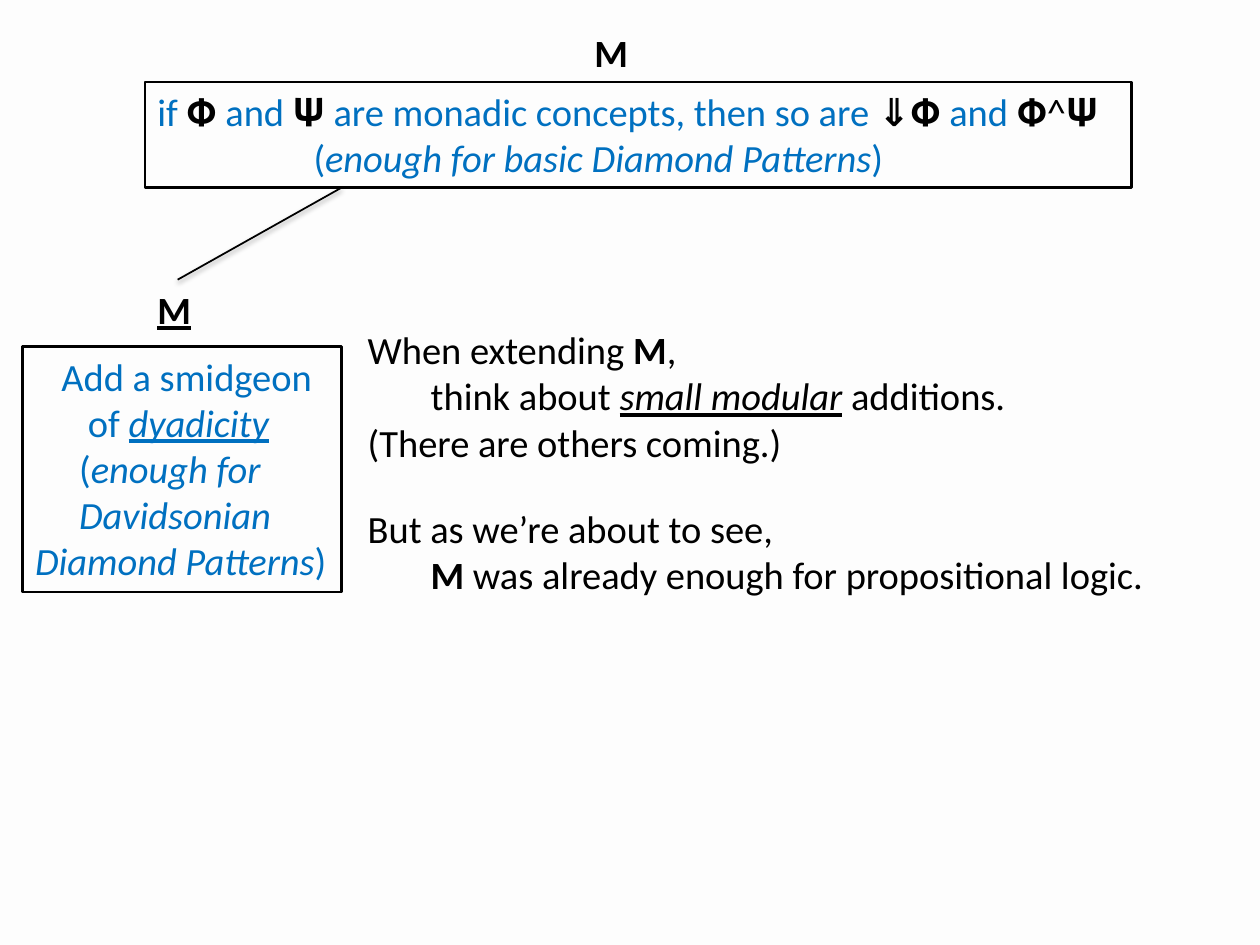
from dataclasses import dataclass

from lxml.etree import SubElement
from pptx import Presentation
from pptx.dml.color import RGBColor
from pptx.enum.shapes import MSO_CONNECTOR as Connector, MSO_SHAPE as Shape
from pptx.enum.text import MSO_ANCHOR as Anchor, MSO_AUTO_SIZE as AutoSize, PP_ALIGN as Align
from pptx.oxml.ns import qn
from pptx.slide import Slide
from pptx.util import Inches, Pt

BLACK = RGBColor(0x00, 0x00, 0x00)
BLUE = RGBColor(0x00, 0x70, 0xC0)
PAPER = RGBColor(0xFD, 0xFD, 0xFD)


@dataclass(frozen=True)
class Span:
    text: str
    color: RGBColor = BLACK
    bold: bool = False
    italic: bool = False
    underline: bool = False


@dataclass(frozen=True)
class Line:
    spans: tuple[Span, ...]
    indent: float = 0


@dataclass(frozen=True)
class Block:
    left: float
    top: float
    width: float
    height: float
    lines: tuple[Line, ...]
    framed: bool = False


def line(*spans: Span, indent: float = 0) -> Line:
    return Line(spans, indent)


def blue(text: str, italic: bool = False, underline: bool = False) -> Span:
    return Span(text, BLUE, italic=italic, underline=underline)


MODEL_LABEL = Block(4.62, 0.18, 0.76, 0.47, (line(Span("M", bold=True)),))
MODEL_BOX = Block(1.15, 0.65, 7.83, 0.84, (
    line(
        blue("if "), Span("𝚽 "), blue("and "), Span("𝚿 "),
        blue("are monadic concepts, then so are "),
        Span("⇓", bold=True), Span("𝚽 "), blue("and "), Span("𝚽^𝚿"),
    ),
    line(blue("("), blue("enough for basic Diamond Patterns", italic=True), blue(")"), indent=1.24),
), framed=True)
EXTENSION_BOX = Block(0.18, 2.75, 2.53, 1.95, (
    line(blue("Add a smidgeon"), indent=0.21),
    line(blue("of "), blue("dyadicity", italic=True, underline=True), indent=0.42),
    line(blue("("), blue("enough for", italic=True), indent=0.35),
    line(blue("Davidsonian Diamond Patterns", italic=True), blue(")"), indent=0.35),
), framed=True)
EXTENSION_LABEL = Block(1.15, 2.22, 0.51, 0.47, (line(Span("M", bold=True, underline=True)),))
ADVICE = Block(2.82, 2.54, 5.29, 1.21, (
    line(Span("When extending "), Span("M", bold=True), Span(",")),
    line(
        Span("think about "), Span("small modular", italic=True, underline=True),
        Span(" additions."), indent=0.5,
    ),
    line(Span("(There are others coming.)")),
))
PREVIEW = Block(2.82, 3.96, 6.48, 0.84, (
    line(Span("But as we’re about to see,")),
    line(Span("M", bold=True), Span(" was already enough for propositional logic."), indent=0.5),
))


def draw_block(page: Slide, block: Block) -> None:
    place = [Inches(n) for n in (block.left, block.top, block.width, block.height)]
    if block.framed:
        box = page.shapes.add_shape(Shape.RECTANGLE, *place)
        box.shadow.inherit = False
        box.fill.background()
        box.line.color.rgb = BLACK
        box.line.width = Pt(1.5)
    else:
        box = page.shapes.add_textbox(*place)
    frame = box.text_frame
    frame.word_wrap = True
    frame.auto_size = AutoSize.SHAPE_TO_FIT_TEXT
    frame.vertical_anchor = Anchor.TOP
    frame.margin_right = Inches(0.05)
    for index, row in enumerate(block.lines):
        para = frame.add_paragraph() if index else frame.paragraphs[0]
        para.alignment = Align.LEFT
        para._p.get_or_add_pPr().set("indent", str(Inches(row.indent)))
        for span in row.spans:
            run = para.add_run()
            run.text = span.text
            font = run.font
            font.name = "Calibri"
            font.size = Pt(22)
            font.color.rgb = span.color
            font.bold = span.bold
            font.italic = span.italic
            font.underline = span.underline


def draw_branch(page: Slide) -> None:
    branch = page.shapes.add_connector(
        Connector.STRAIGHT, Inches(1.41), Inches(2.22), Inches(2.71), Inches(1.49)
    )
    branch.line.color.rgb = BLACK
    branch.line.width = Pt(1)
    effects = SubElement(branch._element.spPr, qn("a:effectLst"))
    shadow = SubElement(
        effects, qn("a:outerShdw"), blurRad=str(Pt(3.1)), dist=str(Pt(1.6)),
        dir="5400000", rotWithShape="0",
    )
    tint = SubElement(shadow, qn("a:srgbClr"), val=str(BLACK))
    SubElement(tint, qn("a:alpha"), val="38000")


def main() -> None:
    deck = Presentation()
    deck.slide_width = Inches(10)
    deck.slide_height = Inches(7.5)
    page = deck.slides.add_slide(deck.slide_layouts[6])
    page.background.fill.solid()
    page.background.fill.fore_color.rgb = PAPER
    draw_branch(page)
    for block in (MODEL_LABEL, MODEL_BOX, EXTENSION_BOX, EXTENSION_LABEL, ADVICE, PREVIEW):
        draw_block(page, block)
    deck.save("out.pptx")


if __name__ == "__main__":
    main()
